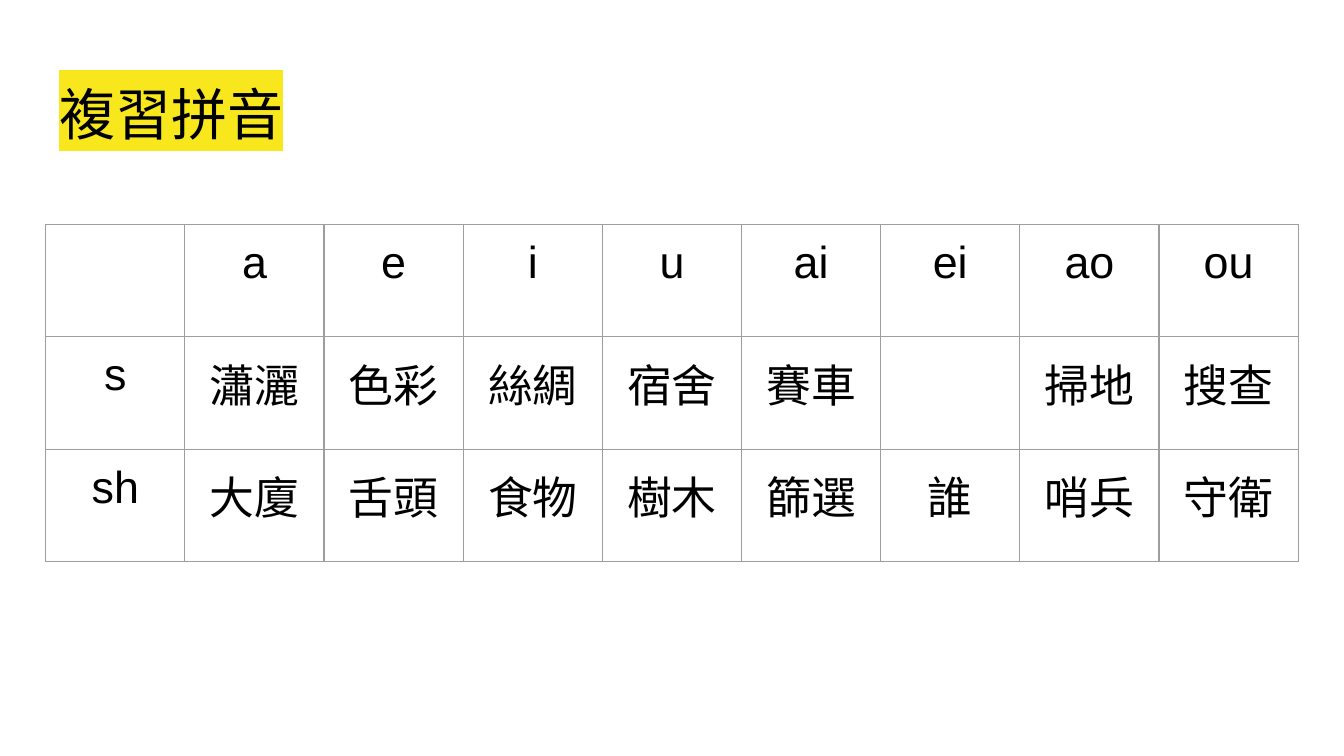
import dataclasses

import lxml.etree
import pptx
import pptx.dml.color
import pptx.enum.text
import pptx.oxml.ns
import pptx.util

Inches = pptx.util.Inches
Align = pptx.enum.text.PP_ALIGN
Anchor = pptx.enum.text.MSO_ANCHOR
qn = pptx.oxml.ns.qn


@dataclasses.dataclass(frozen=True)
class Theme:
    ink: str = "000000"
    mark: str = "F8E71C"
    rule: str = "9E9E9E"
    line: float = 0.75
    head: int = 30
    body: int = 24
    pad: float = 0.1
    head_font: str = "Roboto Condensed"
    body_font: str = "Arial"


THEME = Theme()
TITLE = "複習拼音"
ROWS = [
    ["", "a", "e", "i", "u", "ai", "ei", "ao", "ou"],
    ["s", "瀟灑", "色彩", "絲綢", "宿舍", "賽車", "", "掃地", "搜查"],
    ["sh", "大廈", "舌頭", "食物", "樹木", "篩選", "誰", "哨兵", "守衛"],
]


def add_color(node, color):
    lxml.etree.SubElement(node, qn("a:srgbClr"), val=color)


def write(frame, text, *, size, font, align=Align.LEFT, mark=None):
    para = frame.paragraphs[0]
    para.alignment = align
    if not text:
        para.font.size = pptx.util.Pt(size)
        return
    run = para.add_run()
    run.text = text
    run.font.size = pptx.util.Pt(size)
    run.font.name = font
    run.font.bold = False
    run.font.color.rgb = pptx.dml.color.RGBColor.from_string(THEME.ink)
    if mark:
        light = lxml.etree.Element(qn("a:highlight"))
        add_color(light, mark)
        run.font._element.find(qn("a:solidFill")).addnext(light)


def set_pad(item):
    pad = Inches(THEME.pad)
    item.margin_left = item.margin_top = pad
    item.margin_right = item.margin_bottom = pad


def add_rules(cell):
    props = cell._tc.get_or_add_tcPr()
    width = str(pptx.util.Pt(THEME.line))
    for spot, side in enumerate(("lnL", "lnR", "lnT", "lnB")):
        edge = lxml.etree.Element(qn("a:" + side), w=width)
        add_color(lxml.etree.SubElement(edge, qn("a:solidFill")), THEME.rule)
        props.insert(spot, edge)


def add_title(slide, left, top, width, height):
    title = slide.shapes.title
    title.left, title.top = Inches(left), Inches(top)
    title.width, title.height = Inches(width), Inches(height)
    frame = title.text_frame
    frame.word_wrap = True
    frame.auto_size = pptx.enum.text.MSO_AUTO_SIZE.NONE
    frame.vertical_anchor = Anchor.TOP
    set_pad(frame)
    write(frame, TITLE, size=THEME.head, font=THEME.head_font, mark=THEME.mark)


def add_grid(slide, left, top, width, height):
    count = len(ROWS[0])
    box = map(Inches, (left, top, width, height))
    table = slide.shapes.add_table(len(ROWS), count, *box).table
    table.first_row = table.horz_banding = False
    for col in table.columns:
        col.width = Inches(width / count)
    for row, texts in zip(table.rows, ROWS):
        row.height = Inches(height / len(ROWS))
        for cell, text in zip(row.cells, texts):
            cell.fill.background()
            cell.vertical_anchor = Anchor.TOP
            set_pad(cell)
            add_rules(cell)
            write(cell.text_frame, text, size=THEME.body,
                  font=THEME.body_font, align=Align.CENTER)


def main():
    deck = pptx.Presentation()
    deck.slide_width = Inches(10)
    deck.slide_height = deck.slide_width * 9 // 16
    slide = deck.slides.add_slide(deck.slide_layouts.get_by_name("Title Only"))
    add_title(slide, 0.34, 0.49, 9.32, 0.63)
    add_grid(slide, 0.34, 1.67, 9.32, 2.51)
    deck.save("out.pptx")


if __name__ == "__main__":
    main()
